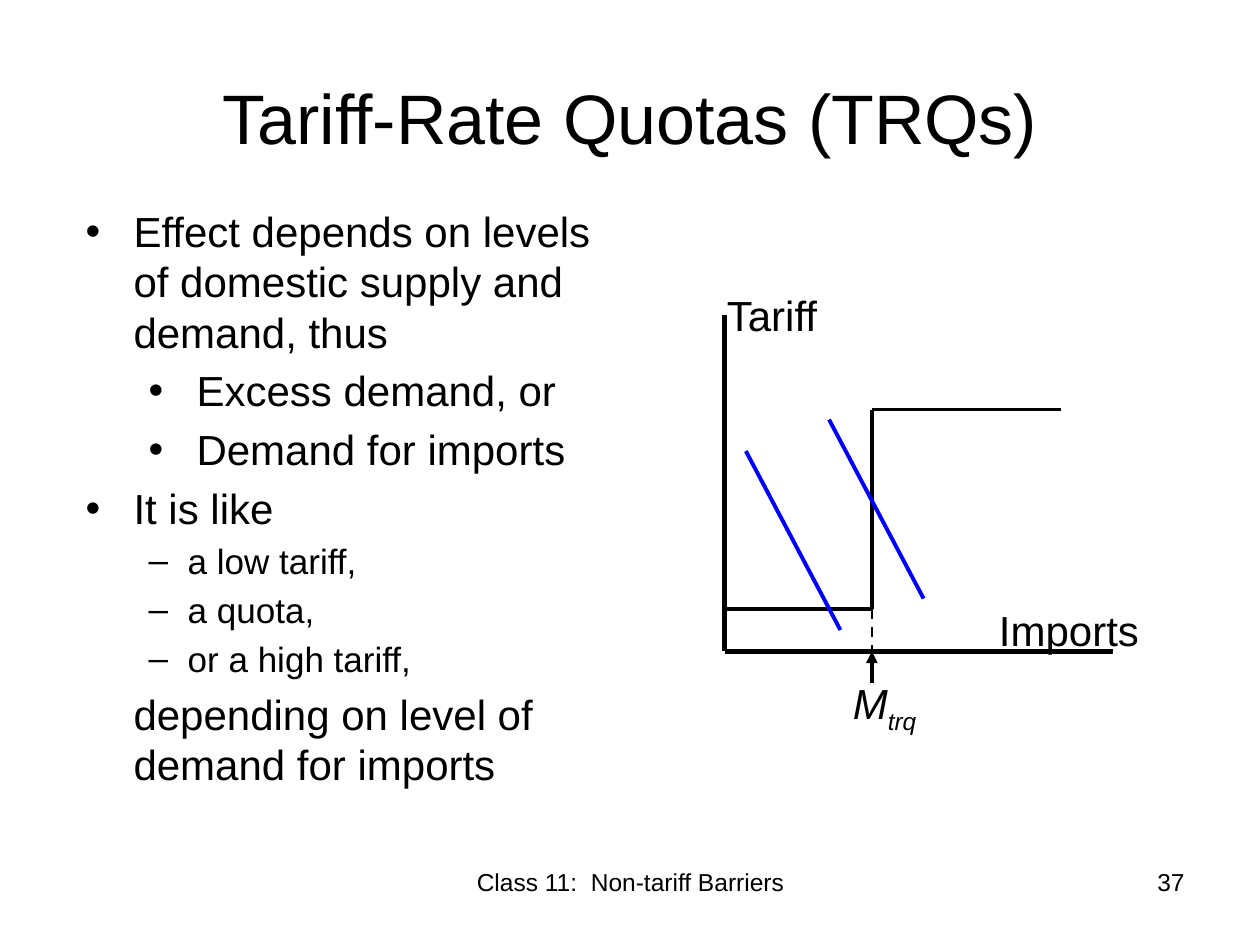
from lxml.etree import SubElement
from pptx import Presentation
from pptx.dml.color import RGBColor
from pptx.enum.dml import MSO_LINE
from pptx.enum.shapes import MSO_CONNECTOR
from pptx.enum.text import MSO_ANCHOR, MSO_AUTO_SIZE, PP_ALIGN
from pptx.oxml.ns import qn
from pptx.util import Inches, Pt

FONT = "Arial"
BLACK, BLUE = "000000", "0000FF"

TITLE = "Tariff-Rate Quotas (TRQs)"
POINTS = [
    ("Effect depends on levels of domestic supply and demand, thus", "main"),
    ("Excess demand, or", "sub"),
    ("Demand for imports", "sub"),
    ("It is like", "main"),
    ("a low tariff,", "dash"),
    ("a quota,", "dash"),
    ("or a high tariff,", "dash"),
    ("depending on level of demand for imports", "plain"),
]
POINT_STYLES = {
    "main": (0, 0.38, -0.38, "•", 24),
    "sub": (1, 0.88, -0.38, "•", 24),
    "dash": (1, 0.81, -0.31, "–", 20),
    "plain": (0, 0.38, 0, None, 24),
}
LABELS = [
    ("Class 11:  Non-tariff Barriers", (3.42, 6.83, 3.17, 0.52), 14, PP_ALIGN.CENTER),
    ("37", (7.17, 6.83, 2.33, 0.52), 14, PP_ALIGN.RIGHT),
    ("Imports", (7.83, 4.75, 1.75, 0.5), 24, PP_ALIGN.LEFT),
    ("Tariff", (5.67, 2.25, 1.75, 0.5), 24, PP_ALIGN.LEFT),
]
QUOTA_LABEL = ("M", "trq")

AXIS_X, AXIS_Y = 5.75, 5.17
QUOTA_X = 6.92
LOW_TARIFF_Y, HIGH_TARIFF_Y = 4.83, 3.25
DEMAND_STARTS = [(5.92, 3.58), (6.58, 3.33)]
DEMAND_RUN, DEMAND_DROP = 0.75, 1.42


def color(value):
    return RGBColor.from_string(value)


def format_run(run, size, italic=False):
    run.font.name = FONT
    run.font.size = Pt(size)
    run.font.italic = italic
    run.font.color.rgb = color(BLACK)


def place(shape, left, top, width, height):
    shape.left, shape.top = Inches(left), Inches(top)
    shape.width, shape.height = Inches(width), Inches(height)


def style_point(paragraph, style):
    level, margin, indent, bullet, size = POINT_STYLES[style]
    paragraph.level = level
    paragraph.alignment = PP_ALIGN.LEFT
    paragraph.space_before = Pt(size * 0.2)
    properties = paragraph._p.get_or_add_pPr()
    properties.set("marL", str(Inches(margin)))
    properties.set("indent", str(Inches(indent)))
    if bullet:
        SubElement(properties, qn("a:buFont"), typeface=FONT)
        SubElement(properties, qn("a:buChar"), char=bullet)
    else:
        SubElement(properties, qn("a:buNone"))
    format_run(paragraph.runs[0], size)


def add_label(slide, text, box, size, alignment=PP_ALIGN.LEFT):
    label = slide.shapes.add_textbox(*map(Inches, box))
    label.text_frame.word_wrap = True
    label.text_frame.text = text
    paragraph = label.text_frame.paragraphs[0]
    paragraph.alignment = alignment
    format_run(paragraph.runs[0], size)
    return paragraph


def add_line(slide, start, end, width=2.25, stroke=BLACK):
    line = slide.shapes.add_connector(MSO_CONNECTOR.STRAIGHT, *map(Inches, start + end))
    line.line.color.rgb = color(stroke)
    line.line.width = Pt(width)
    SubElement(line._element.spPr, qn("a:effectLst"))
    return line


def add_text(slide):
    title, body = slide.placeholders
    place(title, 0.5, 0.3, 9, 1.25)
    title.text_frame.text = TITLE
    title.text_frame.vertical_anchor = MSO_ANCHOR.MIDDLE
    title.text_frame.paragraphs[0].alignment = PP_ALIGN.CENTER
    format_run(title.text_frame.paragraphs[0].runs[0], 40)

    place(body, 0.58, 1.58, 4.33, 2.67)
    body.text_frame.text = "\n".join(text for text, _ in POINTS)
    body.text_frame.auto_size = MSO_AUTO_SIZE.NONE
    body.text_frame.vertical_anchor = MSO_ANCHOR.TOP
    for paragraph, (_, style) in zip(body.text_frame.paragraphs, POINTS):
        style_point(paragraph, style)

    for label in LABELS:
        add_label(slide, *label)


def add_diagram(slide):
    origin = (AXIS_X, AXIS_Y)
    quota_base = (QUOTA_X, AXIS_Y)
    quota_low = (QUOTA_X, LOW_TARIFF_Y)
    quota_high = (QUOTA_X, HIGH_TARIFF_Y)
    add_line(slide, (AXIS_X, 2.5), origin, 3)
    add_line(slide, origin, (8.83, AXIS_Y), 3)

    steps = [(AXIS_X, LOW_TARIFF_Y), quota_low, quota_high, (8.42, HIGH_TARIFF_Y)]
    for start, end in zip(steps, steps[1:]):
        add_line(slide, start, end)

    quota_drop = add_line(slide, quota_low, quota_base, 1.5)
    quota_drop.line.dash_style = MSO_LINE.DASH

    symbol, subscript = QUOTA_LABEL
    quota_text = add_label(slide, symbol, (6.67, 5.33, 1.75, 0.5), 24)
    quota_text.runs[0].font.italic = True
    subscript_run = quota_text.add_run()
    subscript_run.text = subscript
    format_run(subscript_run, 24, italic=True)
    subscript_run._r.get_or_add_rPr().set("baseline", "-25000")

    quota_arrow = add_line(slide, (QUOTA_X, 5.42), quota_base)
    SubElement(quota_arrow.line._get_or_add_ln(), qn("a:tailEnd"), type="triangle")

    for x, y in DEMAND_STARTS:
        add_line(slide, (x, y), (x + DEMAND_RUN, y + DEMAND_DROP), stroke=BLUE)


def main():
    presentation = Presentation()
    presentation.slide_width = Inches(10)
    presentation.slide_height = Inches(7.5)
    slide = presentation.slides.add_slide(presentation.slide_layouts[1])
    add_text(slide)
    add_diagram(slide)
    presentation.save("out.pptx")


if __name__ == "__main__":
    main()
